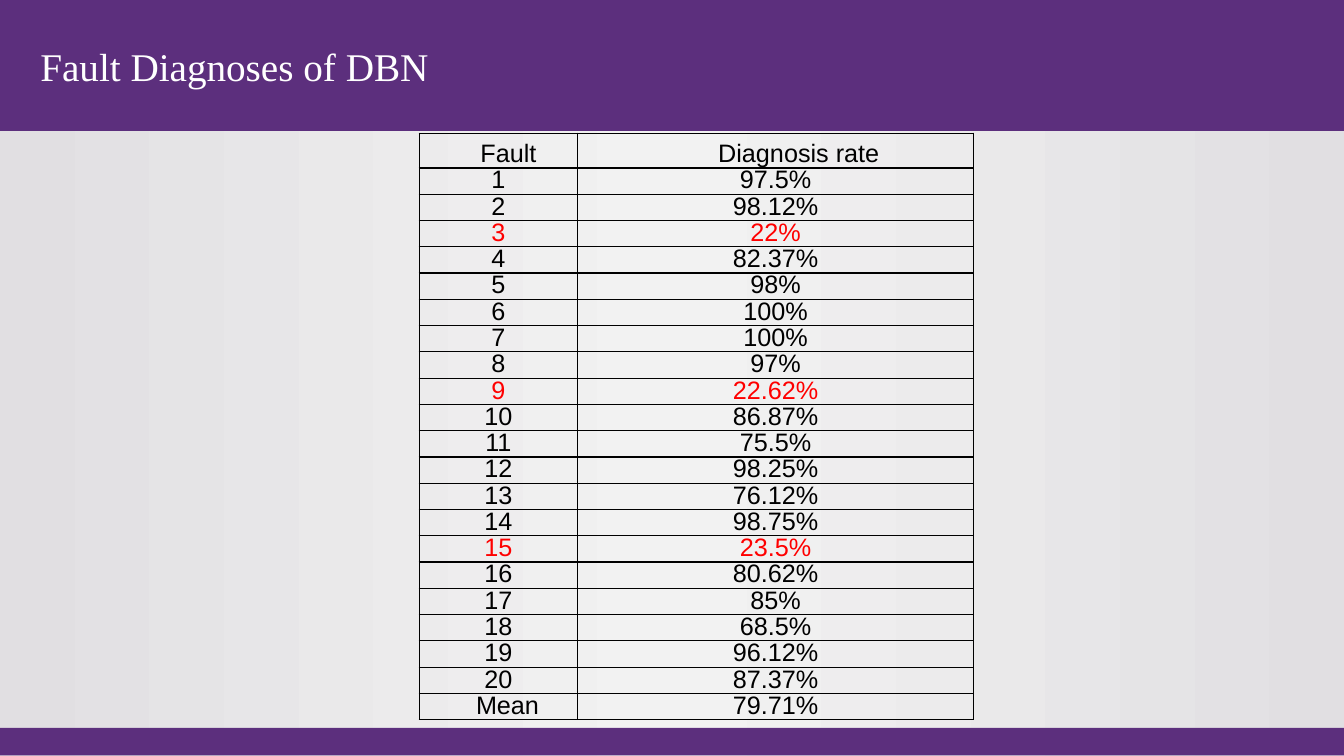
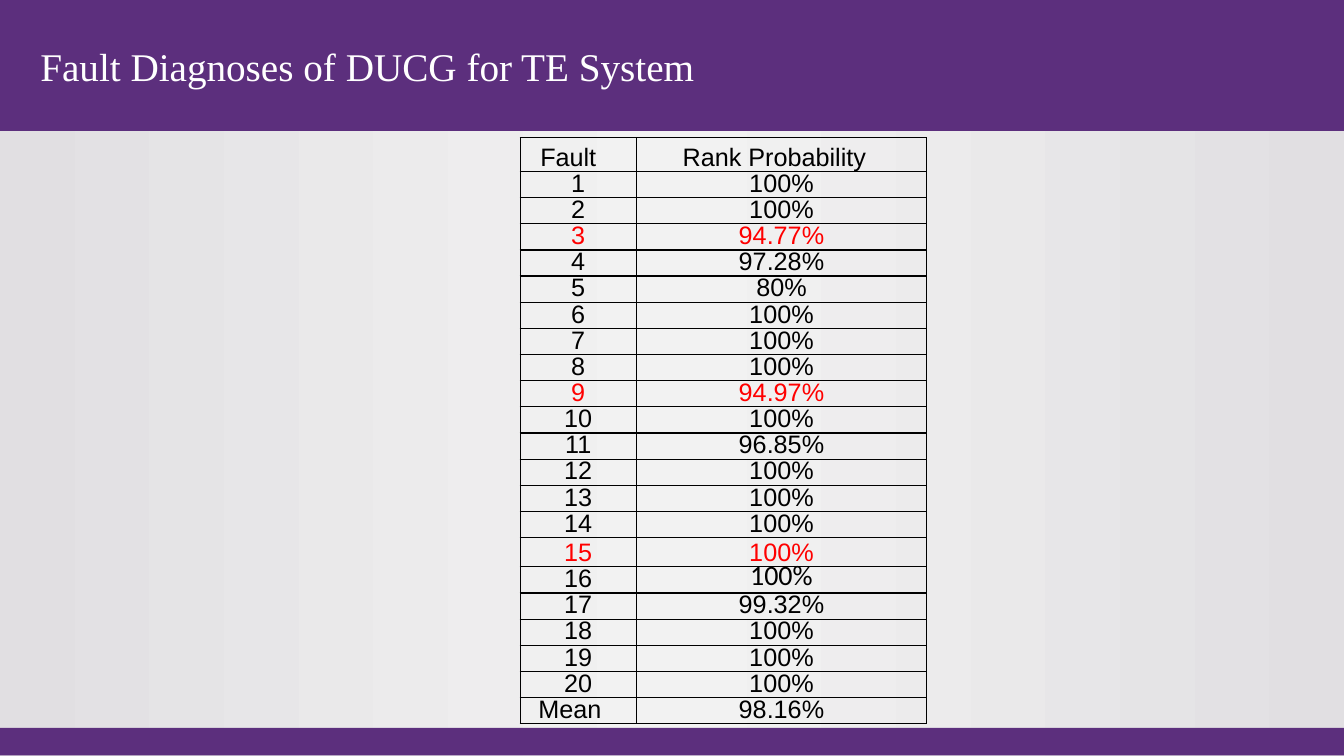
"""Build two slides that tabulate fault diagnosis results."""
from copy import deepcopy

from lxml.etree import SubElement
from pptx import Presentation
from pptx.dml.color import RGBColor
from pptx.enum.shapes import MSO_SHAPE
from pptx.enum.text import MSO_ANCHOR, PP_ALIGN
from pptx.oxml.ns import qn
from pptx.util import Pt

PURPLE, WHITE, BLACK, RED = "5C2F7D", "FFFFFF", "000000", "FF0000"
EDGE_GREY, MIDDLE_GREY = "E1DFE2", "F2F2F2"
NO_STYLE = "{2D5ABB26-0587-4C30-8999-92F81FD0307C}"
HIGHLIGHTED_FAULTS = (3, 9, 15)
BANDS = [(0, 93.6), (520, 19.6)]


def colour(code):
    return RGBColor.from_string(code)


def add_borders(cell):
    properties = cell._tc.get_or_add_tcPr()
    for side in ("a:lnL", "a:lnR", "a:lnT", "a:lnB"):
        line = SubElement(properties, qn(side), w=str(Pt(1)))
        fill = SubElement(line, qn("a:solidFill"))
        SubElement(fill, qn("a:srgbClr"), val=BLACK)


SLIDES = [
    {
        "title": "Fault Diagnoses of DBN",
        "heading": "Diagnosis rate",
        "rates": ["97.5%", "98.12%", "22%", "82.37%", "98%", "100%", "100%",
                  "97%", "22.62%", "86.87%", "75.5%", "98.25%", "76.12%",
                  "98.75%", "23.5%", "80.62%", "85%", "68.5%", "96.12%",
                  "87.37%"],
        "mean": "79.71%",
        "left": 299.5, "top": 95.2, "widths": (113, 283),
        "header_height": 24.8, "row_height": 18.78, "tall_rows": {},
        "label_align": PP_ALIGN.CENTER, "special_fonts": {},
    },
    {
        "title": "Fault Diagnoses of DUCG for TE System",
        "heading": "Rank Probability",
        "rates": ["100%", "100%", "94.77%", "97.28%", "80%", "100%", "100%",
                  "100%", "94.97%", "100%", "96.85%", "100%", "100%", "100%",
                  "100%", "100%", "99.32%", "100%", "100%", "100%"],
        "mean": "98.16%",
        "left": 371.5, "top": 98.3, "widths": (83, 207.4),
        "header_height": 24.2, "row_height": 18.7, "tall_rows": {15: 20.9},
        "label_align": PP_ALIGN.LEFT, "special_fonts": {(16, 1): ("Calibri", 20)},
    },
]

deck = Presentation()
deck.slide_width, deck.slide_height = Pt(960), Pt(540)
master = deck.slide_master
layout = deck.slide_layouts.get_by_name("Title Only")

background = master.background.fill
background.gradient()
background.gradient_angle = 0
stop_list = master.element.find(".//" + qn("a:gsLst"))
stop_list.append(deepcopy(stop_list[0]))
for stop, position, code in zip(background.gradient_stops, (0, 0.5, 1),
                                (EDGE_GREY, MIDDLE_GREY, EDGE_GREY)):
    stop.position = position
    stop.color.rgb = colour(code)

title_frame = layout.placeholders[0]
title_frame.left, title_frame.top = Pt(21.6), Pt(7.2)
title_frame.width, title_frame.height = Pt(850), Pt(80)

pages = [deck.slides.add_slide(layout) for _ in SLIDES]

for top, height in BANDS:
    band = pages[0].shapes.add_shape(
        MSO_SHAPE.RECTANGLE, 0, Pt(top), deck.slide_width, Pt(height))
    band.shadow.inherit = False
    band.fill.solid()
    band.fill.fore_color.rgb = colour(PURPLE)
    band.line.fill.background()
    master.shapes._spTree.insert(2, band._element)

for page, content in zip(pages, SLIDES):
    title = page.shapes.title
    title.text_frame.text = content["title"]
    title.text_frame.vertical_anchor = MSO_ANCHOR.MIDDLE
    para = title.text_frame.paragraphs[0]
    para.alignment = PP_ALIGN.LEFT
    font = para.runs[0].font
    font.name, font.size = "Times New Roman", Pt(28)
    font.color.rgb = colour(WHITE)

    rows = [("Fault", content["heading"])]
    rows += [(str(fault), rate) for fault, rate in enumerate(content["rates"], 1)]
    rows.append(("Mean", content["mean"]))
    last = len(rows) - 1
    heights = [content["header_height"]] + [content["row_height"]] * last
    for row, height in content["tall_rows"].items():
        heights[row] = height
    indents = {(0, 0): 14.4, (0, 1): 33.1, (last, 0): 13}

    frame = page.shapes.add_table(
        len(rows), 2, Pt(content["left"]), Pt(content["top"]),
        Pt(sum(content["widths"])), Pt(sum(heights)))
    table = frame.table
    table.first_row = table.horz_banding = False
    table._tbl.tblPr.find(qn("a:tableStyleId")).text = NO_STYLE
    for column, width in zip(table.columns, content["widths"]):
        column.width = Pt(width)

    for row, (texts, height) in enumerate(zip(rows, heights)):
        table.rows[row].height = Pt(height)
        for column, text in enumerate(texts):
            place = (row, column)
            cell = table.cell(row, column)
            add_borders(cell)
            cell.fill.background()
            cell.margin_left = cell.margin_right = 0
            cell.margin_top = cell.margin_bottom = 0
            cell.vertical_anchor = MSO_ANCHOR.BOTTOM
            cell.text_frame.text = text
            para = cell.text_frame.paragraphs[0]
            para.line_spacing = Pt(9.6)
            para.alignment = PP_ALIGN.CENTER
            if place in indents:
                para.alignment = content["label_align"]
                para._p.get_or_add_pPr().set("marL", str(Pt(indents[place])))
            font = para.runs[0].font
            name, size = content["special_fonts"].get(place, ("Arial", 18))
            font.name, font.size = name, Pt(size)
            font.color.rgb = colour(RED if row in HIGHLIGHTED_FAULTS else BLACK)

deck.save("out.pptx")
